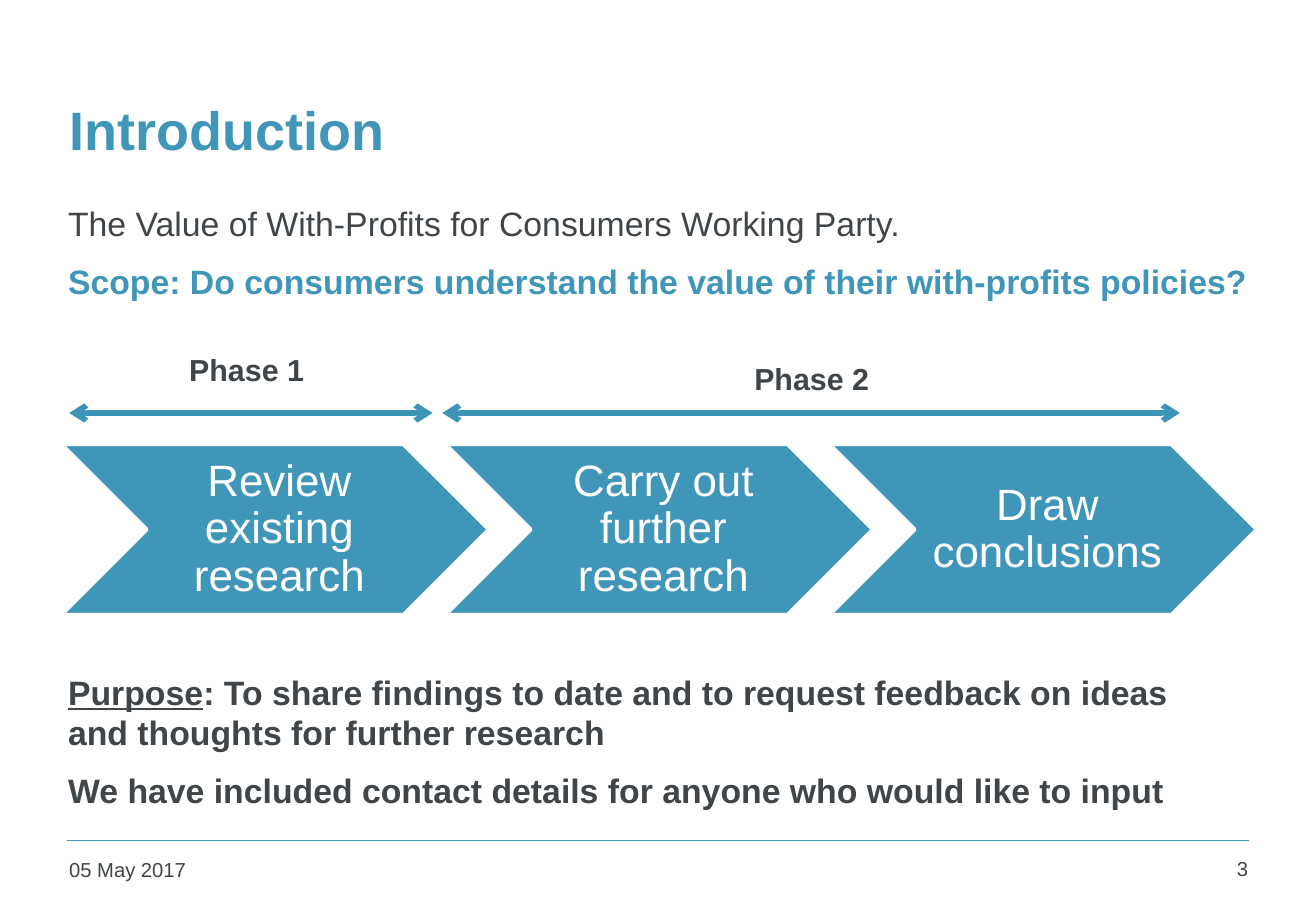
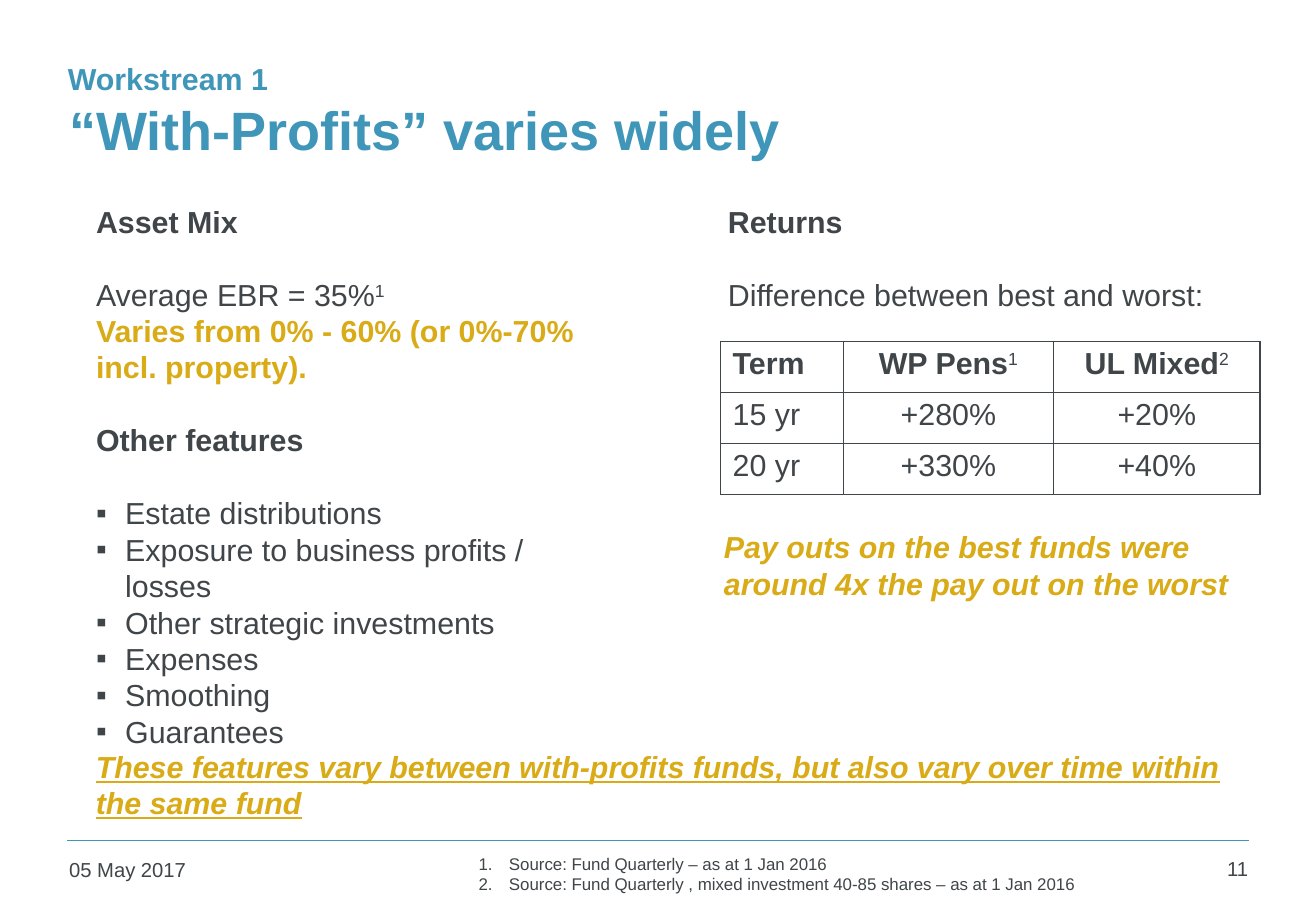
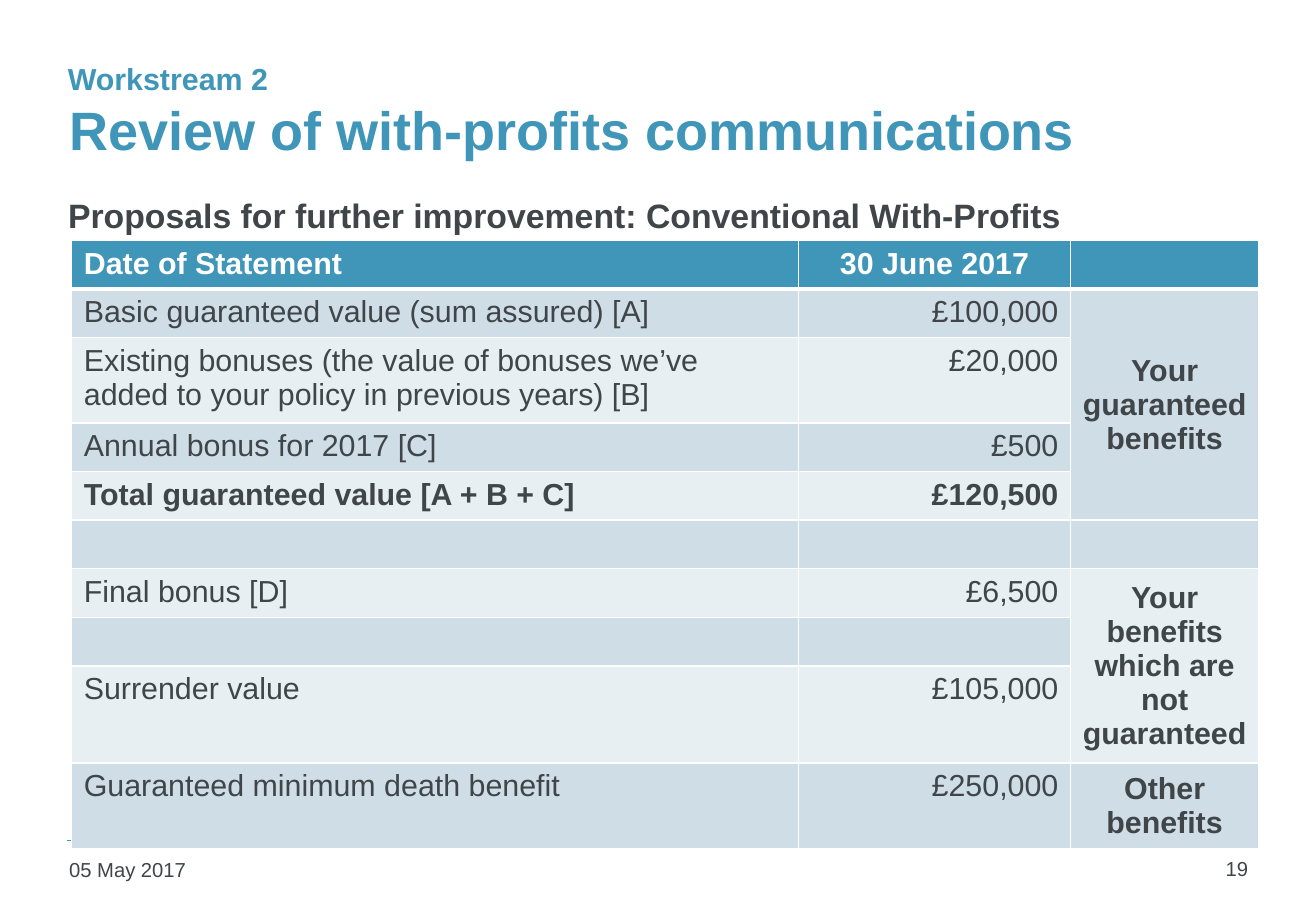
from pptx import Presentation
from pptx.dml.color import RGBColor
from pptx.enum.shapes import MSO_CONNECTOR, MSO_SHAPE
from pptx.enum.text import MSO_ANCHOR, MSO_AUTO_SIZE, PP_ALIGN
from pptx.oxml.ns import qn
from pptx.util import Inches, Pt
from lxml import etree

LEFT, CENTER, RIGHT = PP_ALIGN.LEFT, PP_ALIGN.CENTER, PP_ALIGN.RIGHT
TOP, MIDDLE = MSO_ANCHOR.TOP, MSO_ANCHOR.MIDDLE
STRAIGHT, CHEVRON = MSO_CONNECTOR.STRAIGHT, MSO_SHAPE.CHEVRON
NO_FIT = MSO_AUTO_SIZE.NONE
TWO_CONTENT, ONE_CONTENT = 3, 1

FONT = "Arial"
BLUE, ARROW_BLUE, GREY = "4096B8", "3C94B7", "3F4548"
GOLD, WHITE = "D9AB16", "FFFFFF"
BANDS = ["E8EFF3", "CFDDE6"]
CELL = Inches(0.1)
rgb = RGBColor.from_string


def at(*cells):
    """Turn columns and rows of the 0.1 inch grid into lengths."""
    return [round(c * CELL) for c in cells]


def write(tf, text, size=18, color=GREY, bold=False, italic=False, underline=False,
          align=LEFT, before=0, spacing=None, bullet=None, indent=0):
    """Add a paragraph; text is a string or a list of (string, format) runs."""
    p = tf.paragraphs[0]
    if p.runs:
        p = tf.add_paragraph()
    p.alignment, p.line_spacing = align, spacing
    p.space_before, p.space_after = Pt(before), Pt(0)
    pPr = p._p.get_or_add_pPr()
    pPr.set("marL", str(Inches(indent)))
    pPr.set("indent", str(-Inches(indent)))
    if bullet is None:
        etree.SubElement(pPr, qn("a:buNone"))
    elif bullet == "1.":
        etree.SubElement(pPr, qn("a:buAutoNum"), type="arabicPeriod")
    else:
        etree.SubElement(pPr, qn("a:buFont"), typeface=FONT)
        etree.SubElement(pPr, qn("a:buChar"), char=bullet)
    for part, fmt in [(text, {})] if isinstance(text, str) else text:
        r = p.add_run()
        r.text = part
        f = r.font
        f.name, f.size, f.italic = FONT, Pt(size), italic
        f.bold = fmt.get("bold", bold)
        f.underline = fmt.get("underline", underline)
        f.color.rgb = rgb(color)
        if fmt.get("superscript"):
            r._r.get_or_add_rPr().set("baseline", "30000")


SUPER = {"superscript": True, "bold": False}

prs = Presentation()
prs.slide_width, prs.slide_height = at(108.3, 75)

# Titles, workstream labels and footers
slides = []
for title, workstream, number, layout in [
    ("Introduction", None, "3", TWO_CONTENT),
    ("“With-Profits” varies widely", "Workstream 1", "11", TWO_CONTENT),
    ("Review of with-profits communications", "Workstream 2", "19", ONE_CONTENT),
]:
    s = prs.slides.add_slide(prs.slide_layouts[layout])
    slides.append(s)
    sp = s.shapes.title
    sp.left, sp.top, sp.width, sp.height = at(4.7, 4.4, 98.2, 12.5)
    sp.text_frame.auto_size = NO_FIT
    sp.text_frame.vertical_anchor = MIDDLE
    write(sp.text_frame, title, size=32, color=BLUE, bold=True)
    if workstream:
        tf = s.shapes.add_textbox(*at(4.6, 4.5, 18.7, 4)).text_frame
        write(tf, workstream, color=BLUE, bold=True)
    for text, place, align in [("05 May 2017", (4.7, 70.1, 23.9, 3.6), LEFT),
                               (number, (96, 70, 7.7, 3.7), RIGHT)]:
        tf = s.shapes.add_textbox(*at(*place)).text_frame
        tf.word_wrap = True
        write(tf, text, size=12, align=align)
intro, varies, review = slides

# Body placeholders
bodies = []
for s, index, place in [
    (intro, 1, (4.6, 16.2, 100, 12)),
    (intro, 2, (4.6, 54.8, 98.2, 14)),
    (varies, 1, (6.9, 16.2, 44.9, 46.5)),
    (varies, 2, (58.9, 16.2, 44.9, 11)),
    (review, 1, (4.6, 15.5, 98.2, 4.5)),
]:
    sp = s.placeholders[index]
    sp.left, sp.top, sp.width, sp.height = at(*place)
    sp.text_frame.auto_size = NO_FIT
    sp.text_frame.vertical_anchor = TOP
    bodies.append(sp.text_frame)
scope, purpose, features, returns, proposals = bodies

write(scope, "The Value of With-Profits for Consumers Working Party.", size=20)
write(scope, "Scope: Do consumers understand the value of their with-profits policies?",
      size=20, color=BLUE, bold=True, before=10)
write(purpose, [("Purpose", {"underline": True}),
                (": To share findings to date and to request feedback on ideas "
                 "and thoughts for further research", {})], size=20, bold=True)
write(purpose, "We have included contact details for anyone who would like to input",
      size=20, bold=True, before=10)

LINE_GAP = 21.6
write(features, "Asset Mix", bold=True)
write(features, [("Average EBR = 35%", {}), ("1", SUPER)], before=LINE_GAP)
write(features, "Varies from 0% - 60% (or 0%-70% incl. property).", color=GOLD, bold=True)
write(features, "Other features", bold=True, before=LINE_GAP)
for i, text in enumerate(["Estate distributions", "Exposure to business profits / losses",
                          "Other strategic investments", "Expenses", "Smoothing",
                          "Guarantees"]):
    write(features, text, bullet="▪", indent=0.24, before=0 if i else LINE_GAP)
write(returns, "Returns", bold=True)
write(returns, "Difference between best and worst:", before=LINE_GAP)
write(proposals, "Proposals for further improvement: Conventional With-Profits",
      size=20, bold=True)

# Footer rules and phase arrows
lines = [(s, (5.5, 69.2, 102.8, 69.2), BLUE, 1, False) for s in slides]
lines += [(intro, (x1, 34, x2, 34), ARROW_BLUE, 3.25, True)
          for x1, x2 in [(5.7, 35.6), (36.4, 97.1)]]
for s, ends, color, width, arrows in lines:
    line = s.shapes.add_connector(STRAIGHT, *at(*ends))
    line.line.color.rgb, line.line.width = rgb(color), Pt(width)
    etree.SubElement(line._element.spPr, qn("a:effectLst"))
    if arrows:
        for end in ("a:headEnd", "a:tailEnd"):
            etree.SubElement(line.line._get_or_add_ln(), qn(end), type="arrow")

# Process chevrons
for i, step in enumerate(["Review existing research", "Carry out further research",
                          "Draw conclusions"]):
    sp = intro.shapes.add_shape(CHEVRON, *at(5.1 + 31.6 * i, 36.6, 35.1, 14))
    sp.shadow.inherit = False
    sp.fill.solid()
    sp.fill.fore_color.rgb = rgb(BLUE)
    sp.line.color.rgb, sp.line.width = rgb(WHITE), Pt(2)
    tf = sp.text_frame
    tf.word_wrap, tf.vertical_anchor = True, MIDDLE
    tf.margin_left, tf.margin_top, tf.margin_right, tf.margin_bottom = at(1.1, 0.4, 0.4, 0.4)
    write(tf, step, size=26, color=WHITE, align=CENTER, spacing=0.9)

# Labels and callouts
gold = {"color": GOLD, "bold": True, "italic": True}
label = {"bold": True, "align": CENTER}
for s, text, place, fmt in [
    (intro, "Phase 1", (6.5, 28.4, 27.6, 4), label),
    (intro, "Phase 2", (53, 29.2, 27.6, 4), label),
    (varies, "These features vary between with-profits funds, but also vary over time "
             "within the same fund", (6.9, 61.1, 97.6, 7.1), {**gold, "underline": True}),
    (varies, "Pay outs on the best funds were around 4x the pay out on the worst",
     (58.6, 43, 46.7, 7.1), gold),
]:
    tf = s.shapes.add_textbox(*at(*place)).text_frame
    tf.word_wrap = True
    write(tf, text, **fmt)

tf = varies.shapes.add_textbox(*at(38.4, 69.8, 63.2, 4.4)).text_frame
tf.word_wrap = True
for source in ["Fund Quarterly – as at 1 Jan 2016",
               "Fund Quarterly , mixed investment 40-85 shares – as at 1 Jan 2016"]:
    write(tf, "Source: " + source, size=10, bullet="1.", indent=0.25)

# Tables
returns_rows = [
    ["Term", [("WP Pens", {}), ("1", SUPER)], [("UL Mixed", {}), ("2", SUPER)]],
    ["15 yr", "+280%", "+20%"],
    ["20 yr", "+330%", "+40%"],
]
statement_rows = [
    ["Date of Statement", "30 June 2017", ""],
    ["Basic guaranteed value (sum assured) [A]", "£100,000", "Your guaranteed benefits"],
    ["Existing bonuses (the value of bonuses we’ve added to your policy in previous years) [B]",
     "£20,000", ""],
    ["Annual bonus for 2017 [C]", "£500", ""],
    ["Total guaranteed value [A + B + C]", "£120,500", ""],
    ["", "", ""],
    ["Final bonus [D]", "£6,500", "Your benefits which are not guaranteed"],
    ["", "", ""],
    ["Surrender value", "£105,000", ""],
    ["Guaranteed minimum death benefit", "£250,000", "Other benefits"],
]
TOTAL_ROW = 4
for s, rows, corner, widths, heights, banded, merges in [
    (varies, returns_rows, (59.3, 28.1), [10.1, 17.3, 17], [4.2] * 3, False, []),
    (review, statement_rows, (5.9, 19.8), [59.8, 22.4, 15.5],
     [4, 4, 7, 4, 4, 4, 4, 4, 8, 7], True, [(1, 4), (6, 8)]),
]:
    frame = s.shapes.add_table(len(rows), len(widths),
                               *at(*corner, sum(widths), sum(heights)))
    table = frame.table
    table.first_row = table.horz_banding = False
    for column, width in zip(table.columns, at(*widths)):
        column.width = width
    for row, height in zip(table.rows, at(*heights)):
        row.height = height
    for first, last in merges:
        table.cell(first, 2).merge(table.cell(last, 2))
    for i, texts in enumerate(rows):
        for j, text in enumerate(texts):
            cell = table.cell(i, j)
            side_note = banded and j == 2
            cell.vertical_anchor = MIDDLE if side_note else TOP
            tcPr = cell._tc.get_or_add_tcPr()
            for side in "LRTB":
                heavy = banded and (i, side) in [(0, "B"), (1, "T")]
                ln = etree.SubElement(tcPr, qn("a:ln" + side), w=str(Pt(3 if heavy else 1)))
                fill = etree.SubElement(ln, qn("a:solidFill"))
                etree.SubElement(fill, qn("a:srgbClr"), val=WHITE if banded else GREY)
            if banded:
                cell.fill.solid()
                cell.fill.fore_color.rgb = rgb(BANDS[i % 2] if i else BLUE)
            else:
                cell.fill.background()
            if text:
                figure = banded and i > 0 and j == 1
                write(cell.text_frame, text,
                      color=WHITE if banded and i == 0 else GREY,
                      bold=i == 0 or side_note or (banded and i == TOTAL_ROW),
                      align=LEFT if j == 0 else RIGHT if figure else CENTER)

prs.save("out.pptx")
